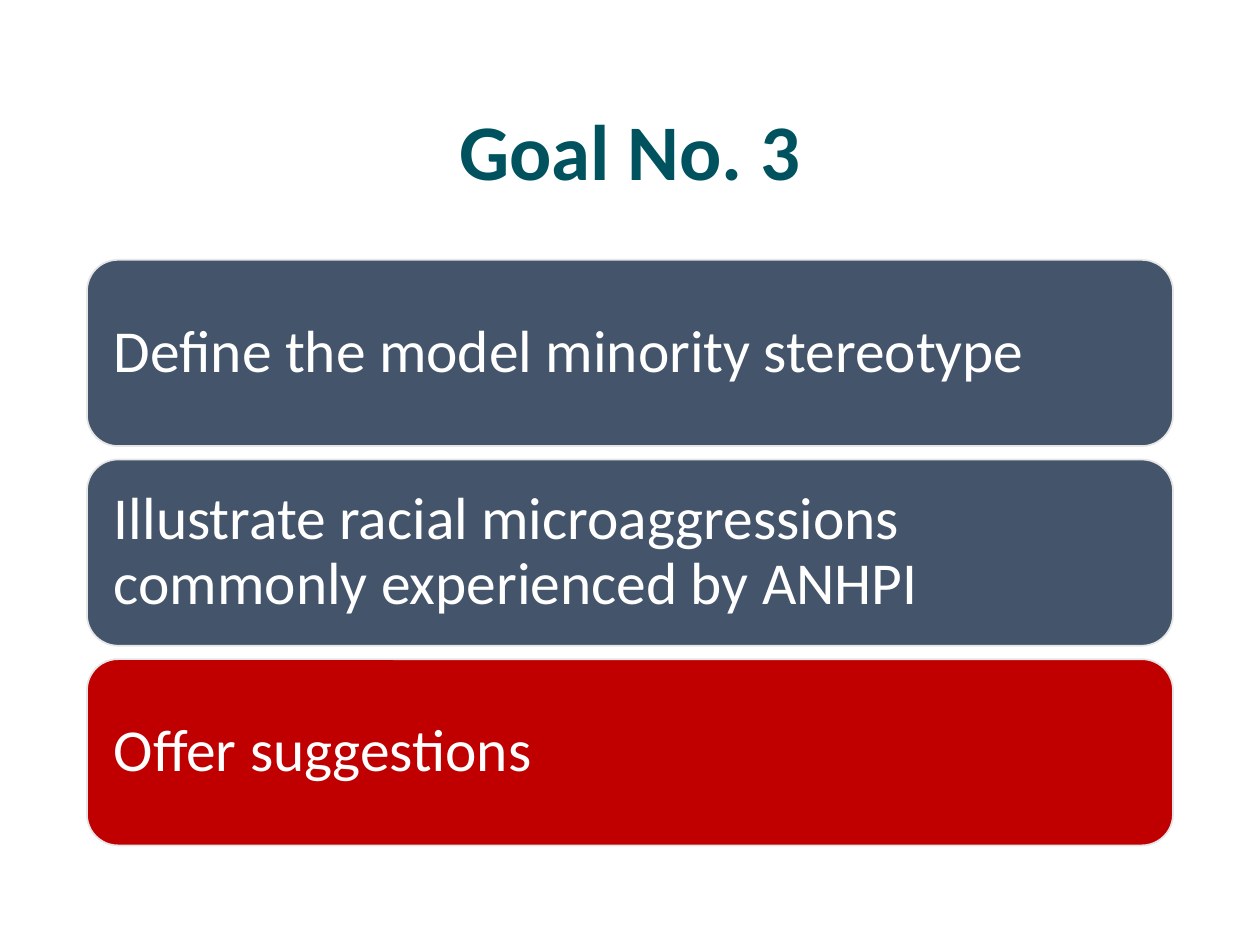
"""Build the "Goal No. 3" slide with its three stacked goal bars."""
import pptx
import pptx.dml.color
import pptx.enum.shapes
import pptx.enum.text
import pptx.util

Pt = pptx.util.Pt
RGBColor = pptx.dml.color.RGBColor
ALIGN = pptx.enum.text.PP_ALIGN

TEAL = RGBColor(0x00, 0x53, 0x5E)
SLATE = RGBColor(0x44, 0x54, 0x6A)
RED = RGBColor(0xC0, 0x00, 0x00)
PALE = RGBColor(0xE7, 0xE6, 0xE6)
WHITE = RGBColor(0xFF, 0xFF, 0xFF)

LEFT, WIDTH = 49.7, 620.6
BAR_TOP, BAR_HEIGHT, BAR_PITCH = 148.5, 106.4, 114.1
GOALS = [
    ("Define the model minority stereotype", SLATE),
    ("Illustrate racial microaggressions commonly experienced by ANHPI", SLATE),
    ("Offer suggestions", RED),
]


def apply(target, values):
    for name, value in values.items():
        setattr(target, name, value)


class GoalSlide:
    font_name = "Calibri"
    margins = ("margin_left", "margin_top", "margin_right", "margin_bottom")

    def __init__(self, page):
        self.page = page

    def set_text(self, box, text, color, size, bold, margin, para_format):
        frame = box.text_frame
        apply(frame, {
            "word_wrap": True,
            "auto_size": pptx.enum.text.MSO_AUTO_SIZE.NONE,
            "vertical_anchor": pptx.enum.text.MSO_ANCHOR.MIDDLE,
        })
        apply(frame, dict.fromkeys(self.margins, Pt(margin)))
        para = frame.paragraphs[0]
        apply(para, {"line_spacing": 0.9, **para_format})
        span = para.add_run()
        span.text = text
        apply(span.font, {"name": self.font_name, "size": Pt(size), "bold": bold})
        span.font.color.rgb = color

    def title(self, text, top, height):
        box = self.page.shapes.title
        apply(box, {"left": Pt(LEFT), "top": Pt(top), "width": Pt(WIDTH), "height": Pt(height)})
        self.set_text(box, text, TEAL, 45, True, 3.6,
                      {"alignment": ALIGN.CENTER, "space_after": Pt(6)})

    def bar(self, text, fill, top):
        box = self.page.shapes.add_shape(
            pptx.enum.shapes.MSO_SHAPE.ROUNDED_RECTANGLE,
            Pt(LEFT), Pt(top), Pt(WIDTH), Pt(BAR_HEIGHT))
        box.shadow.inherit = False
        box.fill.solid()
        box.fill.fore_color.rgb = fill
        box.line.color.rgb = PALE
        box.line.width = Pt(1)
        self.set_text(box, text, WHITE, 34, False, 10.2, {"alignment": ALIGN.LEFT})


def main():
    deck = pptx.Presentation()
    apply(deck, {"slide_width": Pt(720), "slide_height": Pt(540)})
    slide = GoalSlide(deck.slides.add_slide(deck.slide_layouts[5]))
    slide.title("Goal No. 3", 43.9, 89.3)
    for index, (text, fill) in enumerate(GOALS):
        slide.bar(text, fill, BAR_TOP + index * BAR_PITCH)
    deck.save("out.pptx")


if __name__ == "__main__":
    main()
